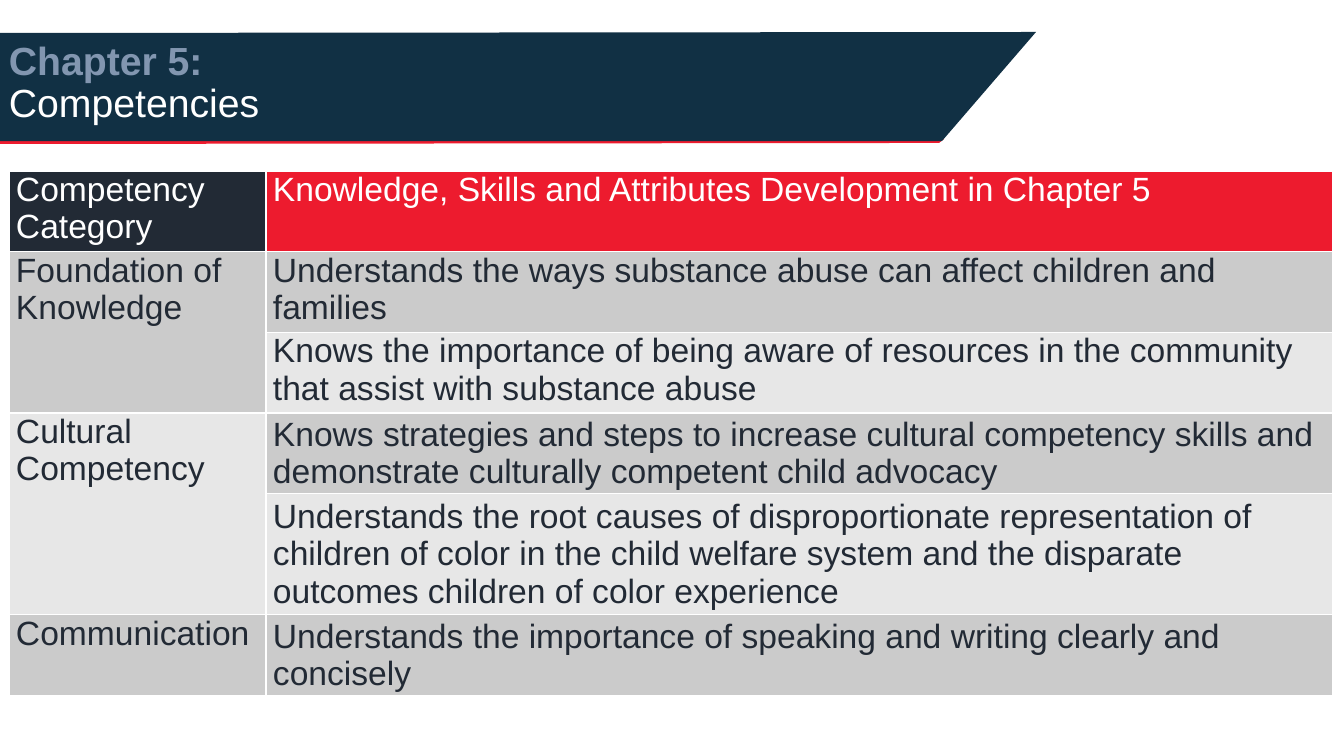
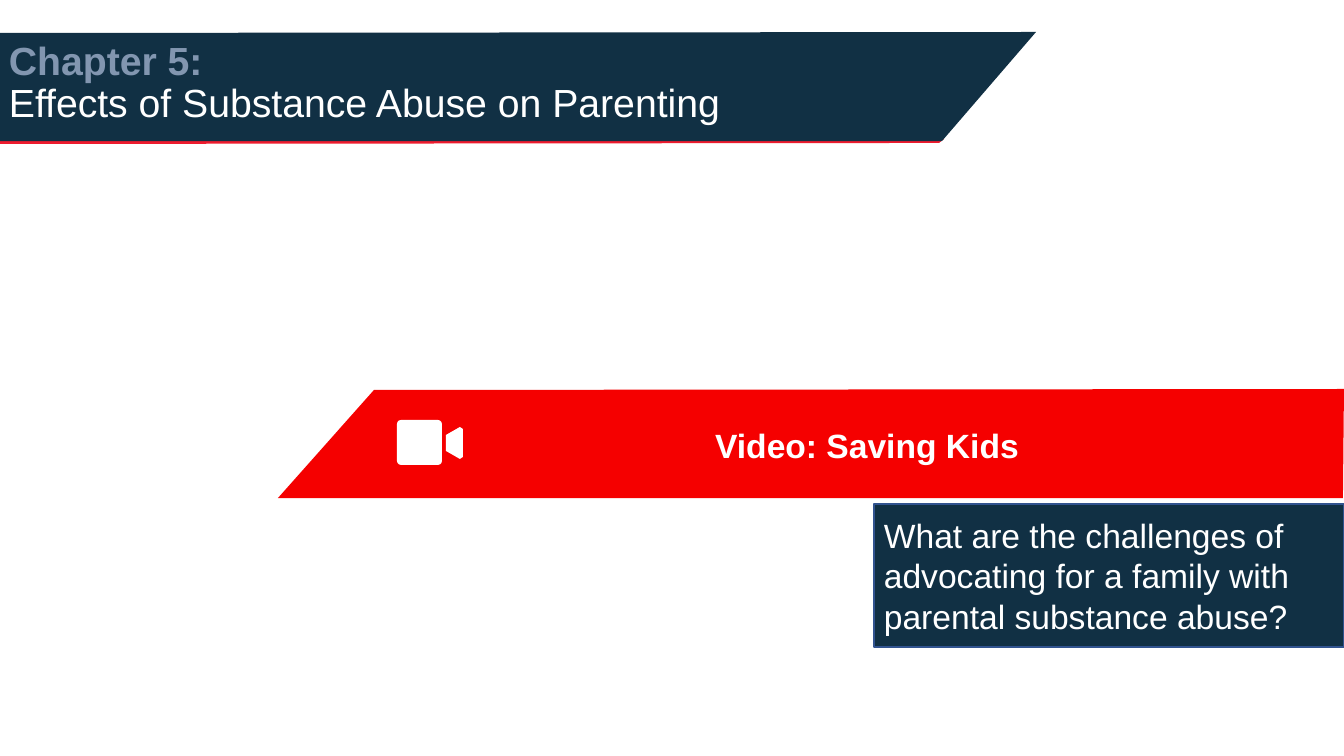
from dataclasses import dataclass

from pptx import Presentation
from pptx.dml.color import RGBColor as RGB
from pptx.enum.shapes import MSO_SHAPE as SHAPE
from pptx.enum.text import MSO_ANCHOR as ANCHOR, PP_ALIGN as ALIGN
from pptx.util import Pt

CHAPTER = "Chapter 5: "
COMPETENCIES_TITLE = "Competencies"
TABLE_HEADER = ("Competency Category",
                "Knowledge, Skills and Attributes Development in Chapter 5")
COMPETENCIES = [
    ("Foundation of Knowledge", ANCHOR.TOP, [
        "Understands the ways substance abuse can affect children and families",
        "Knows the importance of being aware of resources in the community that assist with substance abuse",
    ]),
    ("Cultural Competency", ANCHOR.MIDDLE, [
        "Knows strategies and steps to increase cultural competency skills and demonstrate culturally competent child advocacy",
        "Understands the root causes of disproportionate representation of children of color in the child welfare system and the disparate outcomes children of color experience",
    ]),
    ("Communication", ANCHOR.MIDDLE, [
        "Understands the importance of speaking and writing clearly and concisely",
    ]),
]
PARENTING_TITLE = "Effects of Substance Abuse on Parenting"
VIDEO = "Video: Saving Kids"
QUESTION = "What are the challenges of advocating for a family with parental substance abuse?"

SLIDE_SIZE = (1344, 756)
TITLE_BOX = (-1, 11, 1159, 146)
TITLE_RULE = [(-1, 139), (944, 139), (939, 143), (-1, 144)]
TITLE_BAND = [(1036, 32), (0, 33), (-1, 141), (942, 141)]
TABLE_ORIGIN = (9, 171)
COLUMN_WIDTHS = (257, 1067)
ROW_HEIGHTS = (79, 79, 80, 80, 119, 79)
CELL_MARGIN = 7
VIDEO_BAND = [(278, 498), (1343, 498), (1344, 389), (374, 390)]
VIDEO_BOX = (487, 395, 760, 101)
CAMERA_BODY = (397, 420, 45, 45)
CAMERA_LENS = [(446, 435), (460, 427), (463, 429),
               (463, 457), (460, 459), (446, 451)]
QUESTION_BOX = (874, 504, 470, 143)
PX = 914400 / 100.8


@dataclass(frozen=True)
class Theme:
    font: str = "Arial"
    title_size: int = 28
    body_size: int = 24
    white: str = "FFFFFF"
    navy: str = "113044"
    ink: str = "222A35"
    red: str = "ED1B2E"
    video_red: str = "F50000"
    muted: str = "8296B0"
    edge: str = "31538F"
    stripes: tuple = ("CBCBCB", "E7E7E7")


THEME = Theme()


def emu(*lengths):
    return [round(length * PX) for length in lengths]


def style(run, color, size=THEME.body_size, bold=False):
    run.font.name = THEME.font
    run.font.size = Pt(size)
    run.font.bold = bold
    run.font.color.rgb = RGB.from_string(color)


def paint(shape, fill, line=None):
    shape.shadow.inherit = False
    shape.fill.solid()
    shape.fill.fore_color.rgb = RGB.from_string(fill)
    if line:
        shape.line.color.rgb = RGB.from_string(line)
        shape.line.width = Pt(1)
    else:
        shape.line.fill.background()


def add_outline(slide, points, fill):
    builder = slide.shapes.build_freeform(*points[0], scale=PX)
    builder.add_line_segments(points[1:], close=True)
    paint(builder.convert_to_shape(), fill)


def add_panel(slide, box, text, fill, align, line=None, bold=False):
    panel = slide.shapes.add_shape(SHAPE.RECTANGLE, *emu(*box))
    paint(panel, fill, line)
    frame = panel.text_frame
    frame.text = text
    frame.word_wrap = True
    frame.vertical_anchor = ANCHOR.MIDDLE
    paragraph = frame.paragraphs[0]
    paragraph.alignment = align
    style(paragraph.runs[0], THEME.white, bold=bold)


def add_titled_slide(deck, title):
    slide = deck.slides.add_slide(deck.slide_layouts[6])
    add_outline(slide, TITLE_RULE, THEME.red)
    add_outline(slide, TITLE_BAND, THEME.navy)
    frame = slide.shapes.add_textbox(*emu(*TITLE_BOX)).text_frame
    frame.word_wrap = True
    frame.vertical_anchor = ANCHOR.MIDDLE
    heading = frame.paragraphs[0]
    heading.text = CHAPTER + "\v" + title
    heading.line_spacing = 0.9
    chapter, topic = heading.runs
    style(chapter, THEME.muted, THEME.title_size, bold=True)
    style(topic, THEME.white, THEME.title_size)
    return slide


def fill_cell(cell, text, fill, color=THEME.ink, anchor=ANCHOR.TOP):
    cell.margin_left, cell.margin_right = emu(CELL_MARGIN, CELL_MARGIN)
    cell.margin_top = cell.margin_bottom = 0
    cell.vertical_anchor = anchor
    cell.fill.solid()
    cell.fill.fore_color.rgb = RGB.from_string(fill)
    cell.text_frame.text = text
    style(cell.text_frame.paragraphs[0].runs[0], color)


def add_competency_table(slide):
    size = emu(sum(COLUMN_WIDTHS), sum(ROW_HEIGHTS))
    table = slide.shapes.add_table(len(ROW_HEIGHTS), len(COLUMN_WIDTHS),
                                   *emu(*TABLE_ORIGIN), *size).table
    for column, width in zip(table.columns, emu(*COLUMN_WIDTHS)):
        column.width = width
    for row, height in zip(table.rows, emu(*ROW_HEIGHTS)):
        row.height = height
    for column, (text, fill) in enumerate(zip(TABLE_HEADER, (THEME.ink, THEME.red))):
        fill_cell(table.cell(0, column), text, fill, THEME.white)

    first = 1
    for group, (category, anchor, skills) in enumerate(COMPETENCIES):
        last = first + len(skills) - 1
        category_cell = table.cell(first, 0)
        if last > first:
            category_cell.merge(table.cell(last, 0))
        fill_cell(category_cell, category, THEME.stripes[group % 2])
        for row, skill in enumerate(skills, first):
            fill_cell(table.cell(row, 1), skill, THEME.stripes[(row - 1) % 2],
                      anchor=anchor)
        first = last + 1


def add_camera(slide):
    body = slide.shapes.add_shape(SHAPE.ROUNDED_RECTANGLE, *emu(*CAMERA_BODY))
    body.adjustments[0] = 0.09
    paint(body, THEME.white)
    add_outline(slide, CAMERA_LENS, THEME.white)


def main():
    deck = Presentation()
    deck.slide_width, deck.slide_height = emu(*SLIDE_SIZE)

    add_competency_table(add_titled_slide(deck, COMPETENCIES_TITLE))

    parenting = add_titled_slide(deck, PARENTING_TITLE)
    add_outline(parenting, VIDEO_BAND, THEME.video_red)
    add_camera(parenting)
    add_panel(parenting, QUESTION_BOX, QUESTION, THEME.navy, ALIGN.LEFT, THEME.edge)
    add_panel(parenting, VIDEO_BOX, VIDEO, THEME.video_red, ALIGN.CENTER, bold=True)

    deck.save("out.pptx")


if __name__ == "__main__":
    main()
